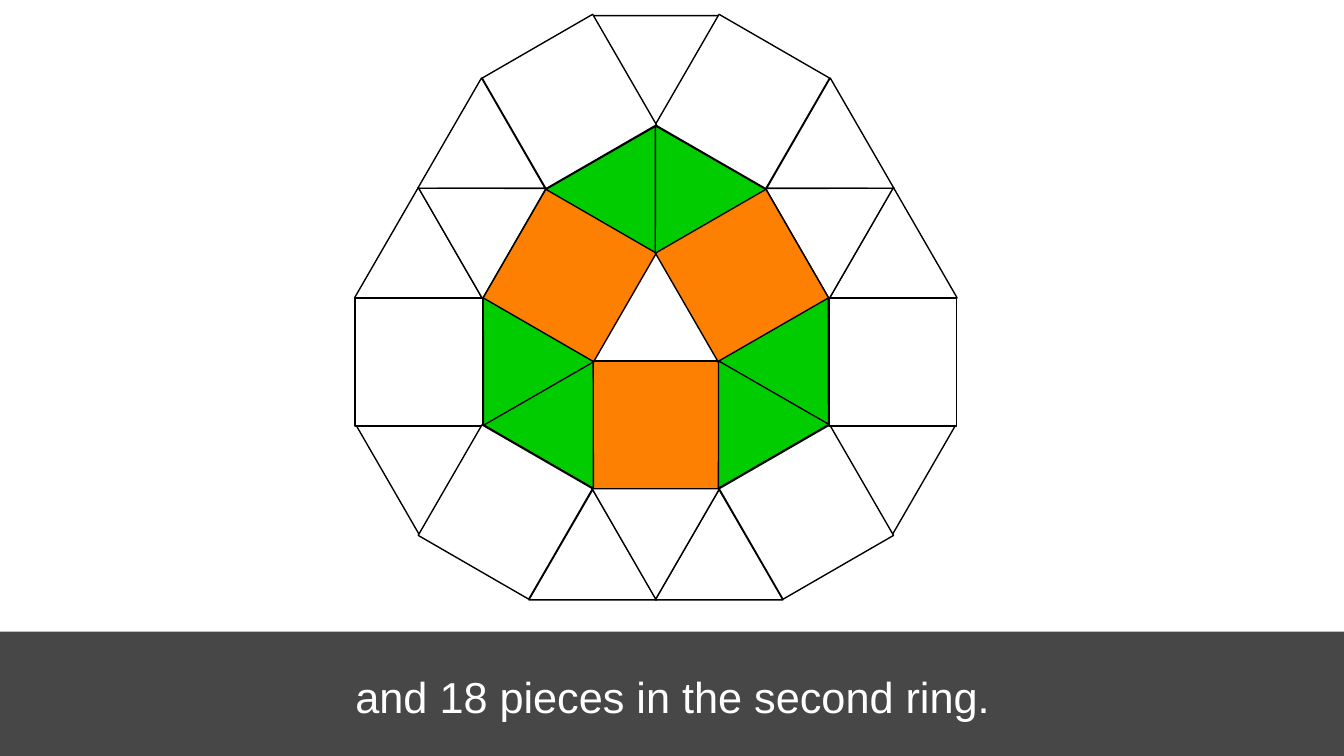
from dataclasses import dataclass
from math import cos, radians, sin

from lxml.etree import SubElement
from pptx import Presentation
from pptx.dml.color import RGBColor
from pptx.enum.shapes import MSO_SHAPE as Preset
from pptx.enum.text import MSO_ANCHOR as Anchor, MSO_AUTO_SIZE as AutoSize, PP_ALIGN as Align
from pptx.oxml.ns import qn
from pptx.slide import Slide
from pptx.util import Pt

PX = 9144  # EMU in one px, 100 px to the inch
COLORS = {"white": "FFFFFF", "black": "000000", "orange": "FE8002", "green": "00CC00"}

SLIDE_WIDTH = 1000
SIDE = 95
TRIANGLE_HEIGHT = 82
CENTER_X, CENTER_Y = 488, 242


@dataclass
class Trio:
    """Three tiles, 120 degrees apart around the pattern's center.

    x and y lead from there to the first tile's centroid; turns are in degrees.
    """
    preset: Preset
    x: int
    y: int
    turns: tuple[int, int, int]
    color: str = "white"


TRIANGLE, SQUARE = Preset.ISOSCELES_TRIANGLE, Preset.RECTANGLE

SECOND_RING = [
    Trio(TRIANGLE, 47, 177, (0, 120, 240)),
    Trio(TRIANGLE, -47, 177, (0, 120, 240)),
    Trio(TRIANGLE, 0, -203, (180, 300, 60)),
    Trio(TRIANGLE, 0, 149, (300, 60, 300)),
    Trio(SQUARE, 112, 139, (330, 0, 30)),
    Trio(SQUARE, -112, 139, (30, 330, 0)),
]
FIRST_RING = [
    Trio(SQUARE, 0, 74, (0, 30, 330), "orange"),
    Trio(TRIANGLE, -27, -101, (30, 30, 30), "green"),
    Trio(TRIANGLE, 27, -101, (330, 330, 210), "green"),
]


def px(length: float) -> int:
    return round(length * PX)


def rgb(name: str) -> RGBColor:
    return RGBColor.from_string(COLORS[name])


def rotate(x: float, y: float, degrees: float) -> tuple[float, float]:
    angle = radians(degrees)
    return x * cos(angle) - y * sin(angle), x * sin(angle) + y * cos(angle)


def draw_trio(slide: Slide, trio: Trio) -> None:
    is_triangle = trio.preset == TRIANGLE
    height = TRIANGLE_HEIGHT if is_triangle else SIDE
    # A triangle's centroid lies a sixth of its height below the box center
    drop = height / 6 if is_triangle else 0
    for step, turn in enumerate(trio.turns):
        x, y = rotate(trio.x, trio.y, step * 120)
        drop_x, drop_y = rotate(0, drop, turn)
        left = CENTER_X + x - drop_x - SIDE / 2
        top = CENTER_Y + y - drop_y - height / 2
        tile = slide.shapes.add_shape(trio.preset, px(left), px(top), px(SIDE), px(height))
        tile.rotation = turn
        tile.shadow.inherit = False
        tile.fill.solid()
        tile.fill.fore_color.rgb = rgb(trio.color)
        tile.line.color.rgb = rgb("black")
        tile.line.width = Pt(0.75)


def draw_caption(slide: Slide, words: str) -> None:
    caption = slide.shapes.title
    # Translucent band behind the caption
    band = slide.shapes.add_shape(Preset.RECTANGLE, 0, px(470), px(SLIDE_WIDTH), px(94))
    band.shadow.inherit = False
    band.line.fill.background()
    band.fill.solid()
    band.fill.fore_color.rgb = rgb("black")
    tint = band.element.spPr.find(qn("a:solidFill"))[0]
    SubElement(tint, qn("a:alpha"), val="72000")
    caption.element.addprevious(band.element)

    # Caption text
    caption.left, caption.top, caption.width, caption.height = map(px, (163, 471, 675, 94))
    frame = caption.text_frame
    frame.text = words
    frame_format = {
        "word_wrap": True, "auto_size": AutoSize.NONE, "vertical_anchor": Anchor.MIDDLE,
        "margin_left": px(10), "margin_right": px(10),
        "margin_top": px(5), "margin_bottom": px(5),
    }
    for key, value in frame_format.items():
        setattr(frame, key, value)
    line = frame.paragraphs[0]
    line.alignment = Align.CENTER
    font = line.runs[0].font
    for key, value in {"name": "Arial", "size": Pt(23.2), "bold": False}.items():
        setattr(font, key, value)
    font.color.rgb = rgb("white")


def main() -> None:
    deck = Presentation()
    deck.slide_width = px(SLIDE_WIDTH)
    deck.slide_height = px(SLIDE_WIDTH * 9 / 16)
    slide = deck.slides.add_slide(deck.slide_layouts.get_by_name("Title Only"))

    draw_caption(slide, "and 18 pieces in the second ring.")
    # Outer tiles first, so that the colored ring lies on top
    for trio in SECOND_RING + FIRST_RING:
        draw_trio(slide, trio)

    deck.save("out.pptx")


if __name__ == "__main__":
    main()
